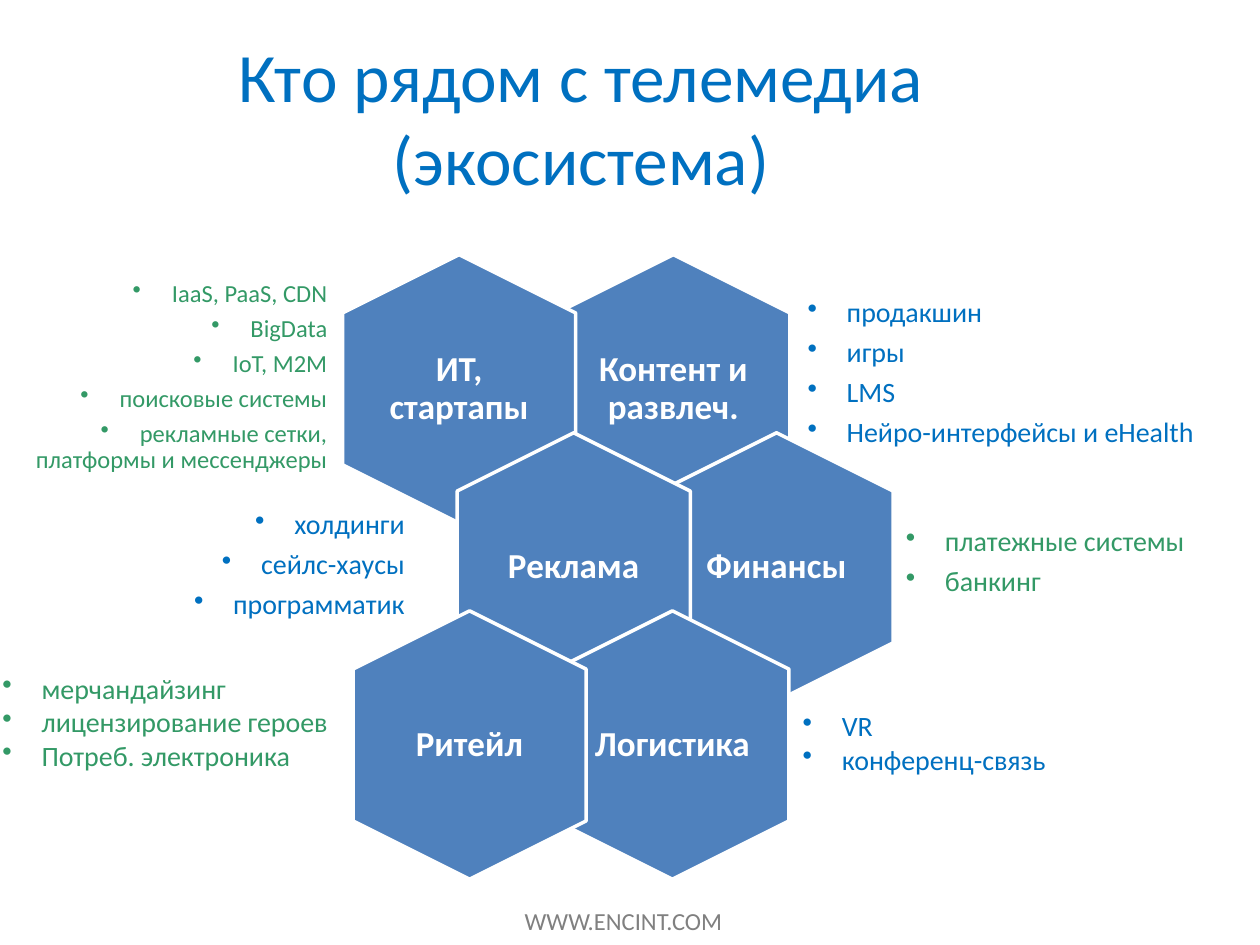
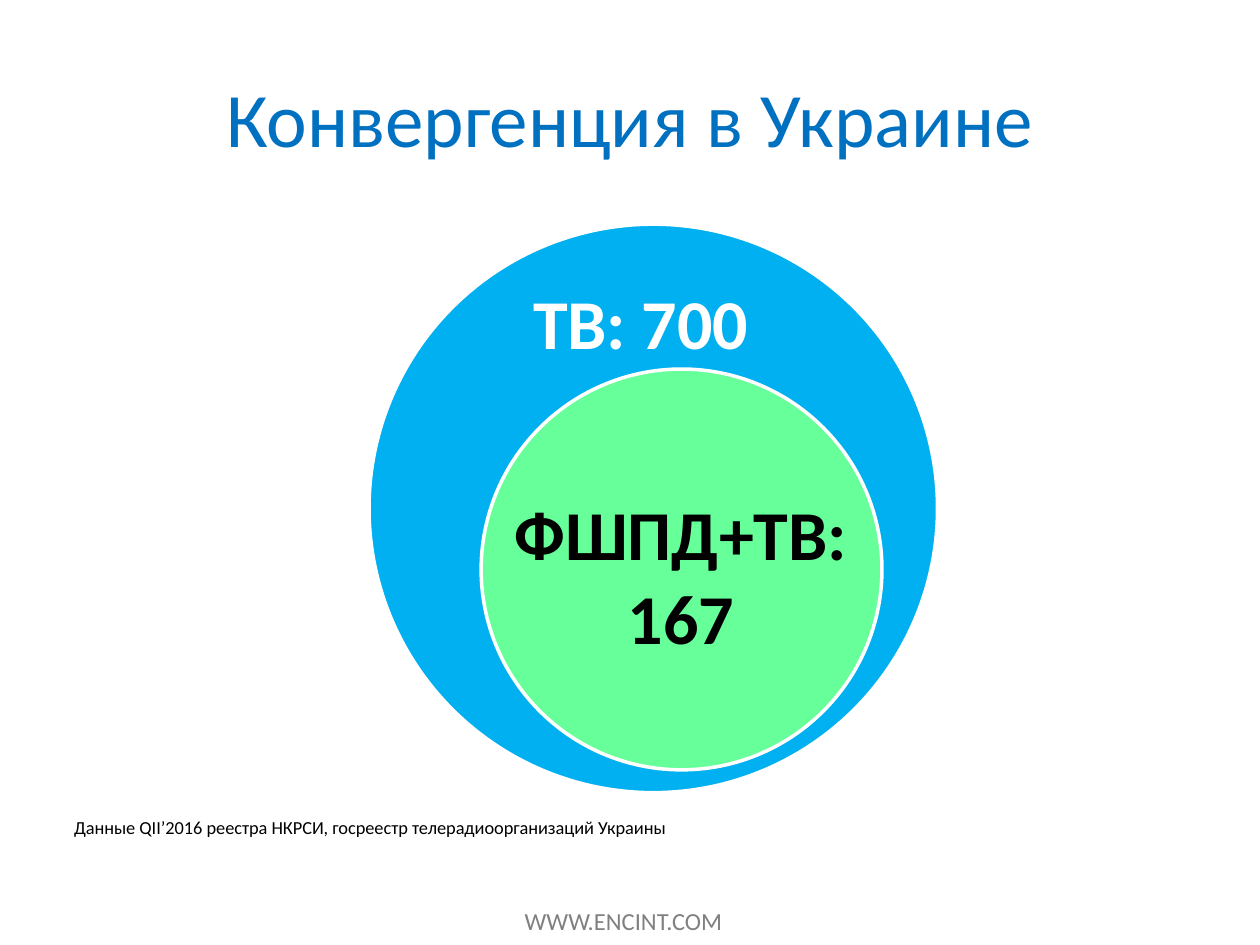
import lxml.etree
import pptx
import pptx.dml.color
import pptx.enum.shapes
import pptx.enum.text
import pptx.oxml.ns
import pptx.util

Cm = pptx.util.Cm
Pt = pptx.util.Pt
RGBColor = pptx.dml.color.RGBColor
ALIGN = pptx.enum.text.PP_ALIGN
ANCHOR = pptx.enum.text.MSO_ANCHOR
SHAPE = pptx.enum.shapes.MSO_SHAPE

FONT = "Calibri"
BLUE = RGBColor(0x00, 0x70, 0xC0)
GREEN = RGBColor(0x33, 0x99, 0x66)
HEXAGON_BLUE = RGBColor(0x4F, 0x81, 0xBD)
SKY = RGBColor(0x00, 0xB0, 0xF0)
MINT = RGBColor(0x66, 0xFF, 0x99)
GREY = RGBColor(0x80, 0x80, 0x80)
WHITE = RGBColor(0xFF, 0xFF, 0xFF)
BLACK = RGBColor(0x00, 0x00, 0x00)

HEXAGON_WIDTH, HEXAGON_HEIGHT = 5.41, 4.7
LABEL_WIDTH, LABEL_HEIGHT = 3.25, 3.73
COMB_TOP, COMB_ROW_STEP = 5.49, 3.59
COMB_ROWS = [
    (6.55, 4.32, ("ИТ, стартапы", "Контент и развлеч.")),
    (8.86, 4.09, ("Реклама", "Финансы")),
    (6.76, 4.09, ("Ритейл", "Логистика")),
]

NEIGHBOURS = [
    ((-0.51, 5.72, 7.26, 3.78), GREEN, 14, ALIGN.RIGHT, True,
     ["IaaS, PaaS, CDN", "BigData", "IoT, M2M", "поисковые системы",
      "рекламные сетки, платформы и мессенджеры"]),
    ((16.13, 6.12, 8.18, 2.82), BLUE, 16, ALIGN.LEFT, True,
     ["продакшин", "игры", "LMS", "Нейро-интерфейсы и eHealth"]),
    ((2.9, 10.08, 5.41, 2.64), BLUE, 16, ALIGN.RIGHT, True,
     ["холдинги", "сейлс-хаусы", "программатик"]),
    ((18.11, 10.13, 7.01, 2.41), GREEN, 16, ALIGN.LEFT, True,
     ["платежные системы", "банкинг"]),
    ((-0.1, 13.34, 7.82, 2.41), GREEN, 16, ALIGN.LEFT, False,
     ["мерчандайзинг", "лицензирование героев", "Потреб. электроника"]),
    ((16.03, 14.15, 6.71, 1.63), BLUE, 16, ALIGN.LEFT, False,
     ["VR", "конференц-связь"]),
]


def set_font(paragraph, size, color, bold=False):
    """Set the shared typeface with the given size and colour."""
    paragraph.font.name = FONT
    paragraph.font.size = Pt(size)
    paragraph.font.color.rgb = color
    paragraph.font.bold = bold


def set_bullet(paragraph, char=None, indent=0):
    """Give a paragraph a hanging bullet, or none."""
    properties = paragraph._p.get_or_add_pPr()
    properties.set("marL", str(Cm(indent)))
    properties.set("indent", str(-Cm(indent)))
    tag = "a:buChar" if char else "a:buNone"
    bullet = lxml.etree.SubElement(properties, pptx.oxml.ns.qn(tag))
    if char:
        bullet.set("char", char)


def place(shape, left, top, width, height):
    """Move and size a shape in centimetres."""
    shape.left, shape.top = Cm(left), Cm(top)
    shape.width, shape.height = Cm(width), Cm(height)


def add_text(shapes, area, lines, inset=0.15, anchor=ANCHOR.MIDDLE):
    """Add a wrapping text box with one paragraph per line."""
    box = shapes.add_textbox(*map(Cm, area))
    frame = box.text_frame
    frame.word_wrap = True
    frame.vertical_anchor = anchor
    frame.margin_left = frame.margin_right = Cm(inset)
    frame.margin_top = frame.margin_bottom = Cm(inset)
    frame.text = "\n".join(lines)
    return box


def add_figure(shapes, kind, area, fill):
    """Add a filled preset shape with a white outline."""
    figure = shapes.add_shape(kind, *map(Cm, area))
    figure.shadow.inherit = False
    figure.fill.solid()
    figure.fill.fore_color.rgb = fill
    figure.line.color.rgb = WHITE
    figure.line.width = Pt(2)
    return figure


def set_title(slide, text, left, size):
    """Fill and format the title placeholder."""
    title = slide.shapes.title
    place(title, left, 0.76, 22.86, 3.18)
    frame = title.text_frame
    frame.text = text
    frame.auto_size = pptx.enum.text.MSO_AUTO_SIZE.NONE
    frame.vertical_anchor = ANCHOR.MIDDLE
    frame.paragraphs[0].alignment = ALIGN.CENTER
    set_font(frame.paragraphs[0], size, BLUE)


def add_master_footer(presentation, slide):
    """Put the web address on the slide master."""
    footer = add_text(slide.shapes, (10.31, 18.14, 4.52, 0.86), ["WWW.ENCINT.COM"])
    footer.text_frame.word_wrap = False
    footer.text_frame.paragraphs[0].alignment = ALIGN.CENTER
    set_font(footer.text_frame.paragraphs[0], 14, GREY)
    presentation.slide_master.element.cSld.spTree.append(footer.element)


def add_hexagon(slide, left, top, label):
    """Add an upright hexagon grouped with its label."""
    cell = slide.shapes.add_group_shape().shapes
    area = (left, top, HEXAGON_WIDTH, HEXAGON_HEIGHT)
    add_figure(cell, SHAPE.HEXAGON, area, HEXAGON_BLUE).rotation = 90
    label_left = left + (HEXAGON_WIDTH - LABEL_WIDTH) / 2
    label_top = top + (HEXAGON_HEIGHT - LABEL_HEIGHT) / 2
    box = add_text(cell, (label_left, label_top, LABEL_WIDTH, LABEL_HEIGHT), [label], 0)
    paragraph = box.text_frame.paragraphs[0]
    paragraph.alignment = ALIGN.CENTER
    paragraph.line_spacing = 0.9
    set_font(paragraph, 20, WHITE, True)


def add_bullets(slide, area, color, size, alignment, spaced, items):
    """Add a bulleted list beside a hexagon."""
    box = add_text(slide.shapes, area, items)
    for paragraph in box.text_frame.paragraphs:
        set_bullet(paragraph, "•", 0.79)
        paragraph.alignment = alignment
        if spaced:
            paragraph.line_spacing = 0.9
            paragraph.space_after = Pt(0.35 * size)
        set_font(paragraph, size, color)


def add_caption(slide, area, text, color):
    """Add a large bold caption over a circle."""
    box = add_text(slide.shapes, area, [text], anchor=ANCHOR.TOP)
    box.text_frame.paragraphs[0].alignment = ALIGN.CENTER
    set_font(box.text_frame.paragraphs[0], 40, color, True)


def build_ecosystem(slide):
    """Build the honeycomb of neighbouring industries."""
    set_title(slide, "Кто рядом с телемедиа\v(экосистема)", 0.28, 39.6)
    for row, (left, step, labels) in enumerate(COMB_ROWS):
        for column in (1, 0):
            top = COMB_TOP + row * COMB_ROW_STEP
            add_hexagon(slide, left + column * step, top, labels[column])
    for neighbour in NEIGHBOURS:
        add_bullets(slide, *neighbour)


def build_convergence(slide):
    """Build the nested circles with their data source."""
    set_title(slide, "Конвергенция в Украине", 1.27, 44)
    source = slide.placeholders[1]
    place(source, 1.24, 16.33, 22.86, 0.91)
    source.text_frame.text = "Данные QII’2016 реестра НКРСИ, госреестр телерадиоорганизаций Украины"
    source.text_frame.auto_size = pptx.enum.text.MSO_AUTO_SIZE.NONE
    paragraph = source.text_frame.paragraphs[0]
    set_bullet(paragraph)
    paragraph.space_before = Pt(0)
    set_font(paragraph, 10.5, BLACK)
    add_figure(slide.shapes, SHAPE.OVAL, (7.44, 4.52, 11.46, 11.46), SKY)
    add_figure(slide.shapes, SHAPE.OVAL, (9.7, 7.44, 8.08, 8.08), MINT)
    add_caption(slide, (9.22, 5.49, 7.39, 1.96), "ТВ: 700", WHITE)
    add_caption(slide, (10.03, 9.73, 7.39, 3.68), "ФШПД+ТВ: 167", BLACK)


def main():
    """Build and save the presentation."""
    presentation = pptx.Presentation()
    presentation.slide_width, presentation.slide_height = Cm(25.4), Cm(19.05)
    layouts = presentation.slide_layouts
    ecosystem = presentation.slides.add_slide(layouts[5])
    add_master_footer(presentation, ecosystem)
    build_ecosystem(ecosystem)
    build_convergence(presentation.slides.add_slide(layouts[1]))
    presentation.save("out.pptx")


if __name__ == "__main__":
    main()
